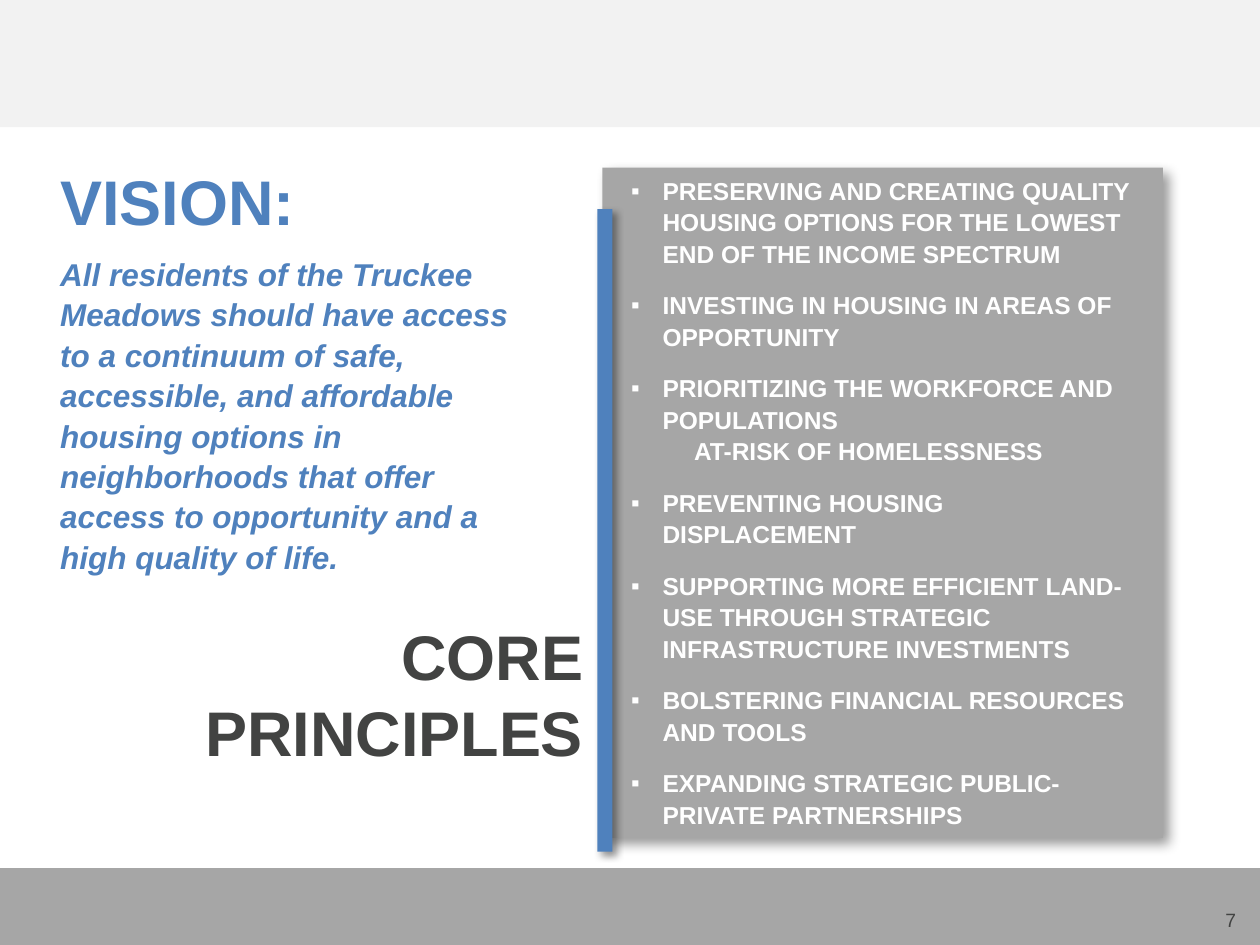
from lxml import etree
from pptx import Presentation
from pptx.dml.color import RGBColor
from pptx.enum.shapes import MSO_SHAPE
from pptx.enum.text import MSO_ANCHOR, PP_ALIGN
from pptx.oxml.ns import qn
from pptx.util import Inches, Pt

RECTANGLE = MSO_SHAPE.RECTANGLE
TOP, BOTTOM = MSO_ANCHOR.TOP, MSO_ANCHOR.BOTTOM
LEFT, RIGHT, JUSTIFY = PP_ALIGN.LEFT, PP_ALIGN.RIGHT, PP_ALIGN.JUSTIFY
BLUE = RGBColor(0x4F, 0x81, 0xBD)
GRAY = RGBColor(0xA6, 0xA6, 0xA6)
PALE = RGBColor(0xF2, 0xF2, 0xF2)
DARK = RGBColor(0x42, 0x43, 0x42)
WHITE = RGBColor(0xFF, 0xFF, 0xFF)

PRINCIPLES = [
    ["PRESERVING AND CREATING QUALITY HOUSING OPTIONS FOR THE LOWEST END OF THE INCOME SPECTRUM"],
    ["INVESTING IN HOUSING IN AREAS OF OPPORTUNITY"],
    ["PRIORITIZING THE WORKFORCE AND POPULATIONS", "AT-RISK OF HOMELESSNESS"],
    ["PREVENTING HOUSING DISPLACEMENT"],
    ["SUPPORTING MORE EFFICIENT LAND-USE THROUGH STRATEGIC INFRASTRUCTURE INVESTMENTS"],
    ["BOLSTERING FINANCIAL RESOURCES AND TOOLS"],
    ["EXPANDING STRATEGIC PUBLIC-PRIVATE PARTNERSHIPS"],
]
VISION = (
    "All residents of the Truckee Meadows should have access to a continuum of safe, "
    "accessible, and affordable housing options in neighborhoods that offer access to "
    "opportunity and a high quality of life."
)


class SlideBuilder:
    font_name = "Arial"
    line_spacing = 1.07

    def __init__(self, slide):
        self.slide = slide

    def rect(self, left, top, width, height, color, shadow=None):
        block = self.slide.shapes.add_shape(
            RECTANGLE, Inches(left), Inches(top), Inches(width), Inches(height))
        block.fill.solid()
        block.fill.fore_color.rgb = color
        block.line.fill.background()
        block.shadow.inherit = False
        if shadow:
            self.cast_shadow(block, *shadow)

    def cast_shadow(self, block, blur, distance):
        effects = block._element.spPr.find(qn("a:effectLst"))
        outer = etree.SubElement(
            effects, qn("a:outerShdw"), blurRad=str(Pt(blur)), dist=str(Pt(distance)),
            dir=str(45 * 60000), algn="tl", rotWithShape="0")
        shade = etree.SubElement(outer, qn("a:srgbClr"), val="000000")
        etree.SubElement(shade, qn("a:alpha"), val="40000")

    def text_box(self, left, top, width, height, anchor=TOP, inset=True):
        frame = self.slide.shapes.add_textbox(
            Inches(left), Inches(top), Inches(width), Inches(height)).text_frame
        frame.word_wrap = True
        frame.vertical_anchor = anchor
        if not inset:
            frame.margin_left = frame.margin_right = 0
            frame.margin_top = frame.margin_bottom = 0
        return frame

    def paragraph(self, frame, text, size, color, align=LEFT, bold=True, italic=False,
                  after=0, spacing=None, indent=0, bullet=None):
        first = frame.paragraphs[0]
        para = frame.add_paragraph() if first.runs else first
        para.alignment = align
        para.space_after = Pt(after)
        if spacing:
            para.line_spacing = spacing
        if indent:
            properties = para._p.get_or_add_pPr()
            properties.set("marL", str(Inches(indent)))
            properties.set("indent", str(Inches(-0.25 if bullet else 0)))
        if bullet:
            etree.SubElement(properties, qn("a:buFont"), typeface=self.font_name)
            etree.SubElement(properties, qn("a:buChar"), char=bullet)
        run = para.add_run()
        run.text = text
        run.font.name = self.font_name
        run.font.size = Pt(size)
        run.font.bold = bold
        run.font.italic = italic
        run.font.color.rgb = color

    def principles(self, frame, items):
        for lead, *continuation in items:
            style = dict(size=14, color=WHITE, spacing=self.line_spacing)
            gap = 11.5
            self.paragraph(frame, lead, indent=0.5, bullet="▪",
                           after=0 if continuation else gap, **style)
            for line in continuation:
                self.paragraph(frame, line, indent=0.75, after=gap, **style)


def main():
    deck = Presentation()
    deck.slide_width, deck.slide_height = Inches(10), Inches(7.5)
    builder = SlideBuilder(deck.slides.add_slide(deck.slide_layouts[6]))

    builder.rect(0, 6.89, 10, 0.61, GRAY)
    builder.rect(0, 0, 10, 1.01, PALE)

    page_number = builder.text_box(7.48, 6.99, 2.33, 0.4, BOTTOM, inset=False)
    builder.paragraph(page_number, "7", 11, DARK, RIGHT, bold=False)

    vision = builder.text_box(0.38, 1.2, 4.04, 3.43)
    spacing = builder.line_spacing
    builder.paragraph(vision, "VISION:", 36, BLUE, JUSTIFY, after=8, spacing=spacing)
    builder.paragraph(vision, VISION, 18, BLUE, italic=True, after=8, spacing=spacing)

    builder.rect(4.78, 1.33, 4.45, 5.32, GRAY, shadow=(7, 5))
    principles = builder.text_box(4.66, 1.33, 4.45, 4.88)
    builder.principles(principles, PRINCIPLES)
    builder.rect(4.74, 1.66, 0.12, 5.1, BLUE, shadow=(4, 3))

    heading = builder.text_box(1.37, 4.9, 3.26, 1.21, inset=False)
    builder.paragraph(heading, "CORE PRINCIPLES", 36, DARK, RIGHT)

    deck.save("out.pptx")


if __name__ == "__main__":
    main()
